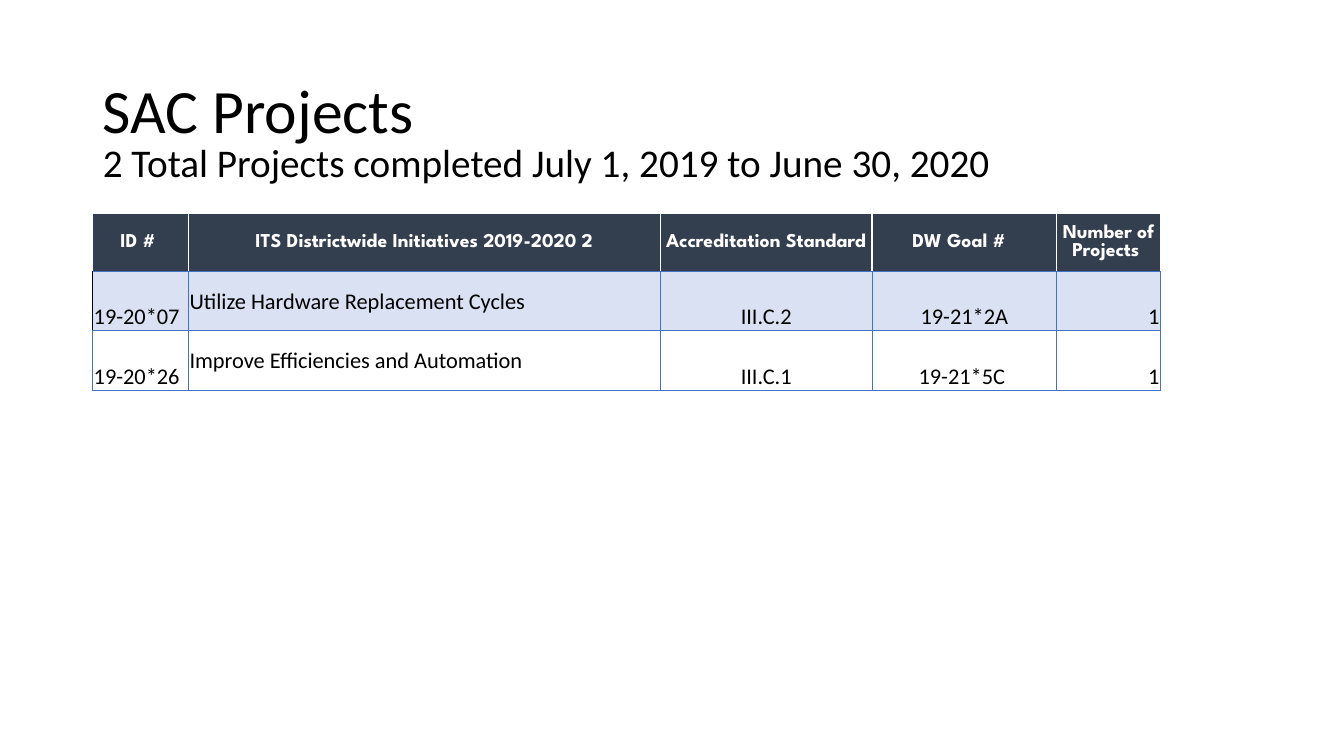
from lxml.etree import SubElement
from pptx import Presentation
from pptx.dml.color import RGBColor
from pptx.enum.text import MSO_ANCHOR as Anchor, MSO_AUTO_SIZE as AutoSize, PP_ALIGN as Align
from pptx.oxml.ns import qn
from pptx.util import Inches, Pt

WHITE = RGBColor(0xFF, 0xFF, 0xFF)
BLACK = RGBColor(0x00, 0x00, 0x00)
BLUE = RGBColor(0x44, 0x72, 0xC4)
NAVY = RGBColor(0x33, 0x3F, 0x4F)
PALE_BLUE = RGBColor(0xD9, 0xE1, 0xF2)

deck = Presentation()
deck.slide_width, deck.slide_height = Inches(13.33), Inches(7.5)
percent_x, percent_y = deck.slide_width / 100, deck.slide_height / 100
slide = deck.slides.add_slide(deck.slide_layouts[1])
left = round(6.9 * percent_x)


def add_text(paragraph, text, font_name, size, color, bold=False):
    run = paragraph.add_run()
    run.text = text
    run.font.name = font_name
    run.font.size = Pt(size)
    run.font.bold = bold
    run.font.color.rgb = color


def set_border(cell, side, color, width):
    line = SubElement(cell._tc.get_or_add_tcPr(), qn(f"a:{side}"), w=str(Pt(width)))
    fill = SubElement(line, qn("a:solidFill"))
    SubElement(fill, qn("a:srgbClr"), val=str(color))


headings = [
    (slide.shapes.title, "SAC Projects", 44, 5.33, 19.33, Anchor.MIDDLE, 0),
    (slide.placeholders[1], "2 Total Projects completed July 1, 2019 to June 30, 2020",
     28, 18.27, 63.47, Anchor.TOP, 10),
]
for heading, text, size, top, height, anchor, space_before in headings:
    heading.left, heading.top = left, round(top * percent_y)
    heading.width, heading.height = round(86.27 * percent_x), round(height * percent_y)
    frame = heading.text_frame
    frame.word_wrap = True
    frame.auto_size = AutoSize.NONE
    frame.vertical_anchor = anchor
    paragraph = frame.paragraphs[0]
    paragraph.alignment = Align.LEFT
    paragraph.line_spacing = 0.9
    paragraph.space_before = Pt(space_before)
    add_text(paragraph, text, "Calibri", size, BLACK)
    properties = paragraph._p.get_or_add_pPr()
    properties.set("marL", "0")
    properties.set("indent", "0")
    SubElement(properties, qn("a:buNone"))

project_rows = [
    ["ID # ", "ITS Districtwide Initiatives 2019-2020 2", "Accreditation Standard",
     "DW Goal #  ", "Number of Projects "],
    ["19-20*07", "Utilize Hardware Replacement Cycles ", "III.C.2", "19-21*2A", "1"],
    ["19-20*26 ", "Improve Efficiencies and Automation ", "III.C.1", "19-21*5C ", "1"],
]
column_shares = [7.13, 35.11, 15.75, 13.73, 7.73]
row_shares = [7.6, 7.87, 7.87]
row_fills = [NAVY, PALE_BLUE, None]
column_aligns = [Align.LEFT, Align.LEFT, Align.CENTER, Align.CENTER, Align.RIGHT]
column_anchors = [Anchor.BOTTOM, Anchor.MIDDLE, Anchor.BOTTOM, Anchor.BOTTOM, Anchor.BOTTOM]

projects = slide.shapes.add_table(
    len(row_shares), len(column_shares), left, round(28.27 * percent_y),
    round(sum(column_shares) * percent_x), round(sum(row_shares) * percent_y)).table
projects.horz_banding = False
for column, share in zip(projects.columns, column_shares):
    column.width = round(share * percent_x)
for row, share in zip(projects.rows, row_shares):
    row.height = round(share * percent_y)

for r, labels in enumerate(project_rows):
    is_header = r == 0
    for c, label in enumerate(labels):
        cell = projects.cell(r, c)
        cell.margin_left = cell.margin_right = cell.margin_top = Inches(0.01)
        cell.margin_bottom = 0
        cell.vertical_anchor = Anchor.MIDDLE if is_header else column_anchors[c]
        paragraph = cell.text_frame.paragraphs[0]
        paragraph.alignment = Align.CENTER if is_header else column_aligns[c]
        if is_header:
            add_text(paragraph, label, "League Spartan", 14, WHITE, bold=True)
        else:
            add_text(paragraph, label, "Calibri", 16, BLACK)
        for side in ("lnL", "lnR", "lnT", "lnB"):
            if is_header and side != "lnB":
                set_border(cell, side, WHITE, 1)
            elif (r, c, side) == (1, 0, "lnL"):
                set_border(cell, side, BLACK, 0.5)
            else:
                set_border(cell, side, BLUE, 0.5)
        if row_fills[r] is None:
            cell.fill.background()
        else:
            cell.fill.solid()
            cell.fill.fore_color.rgb = row_fills[r]

deck.save("out.pptx")
